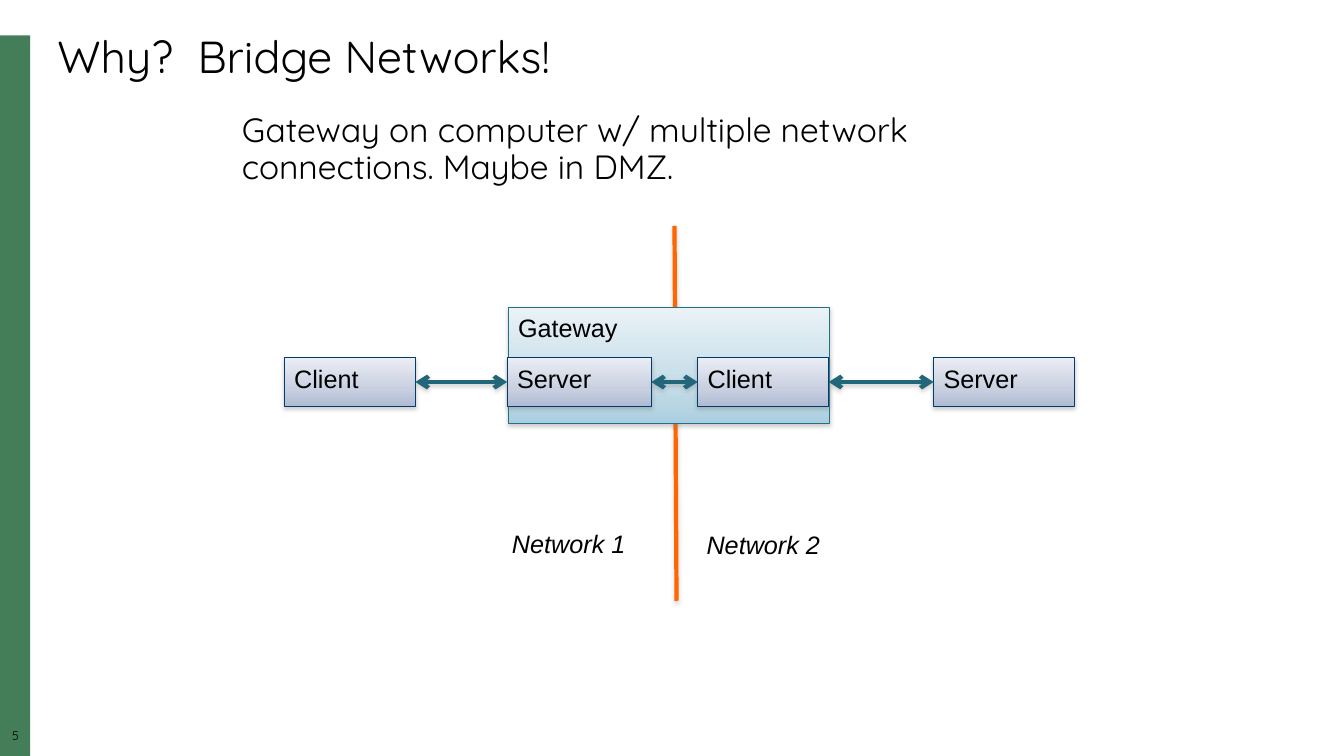
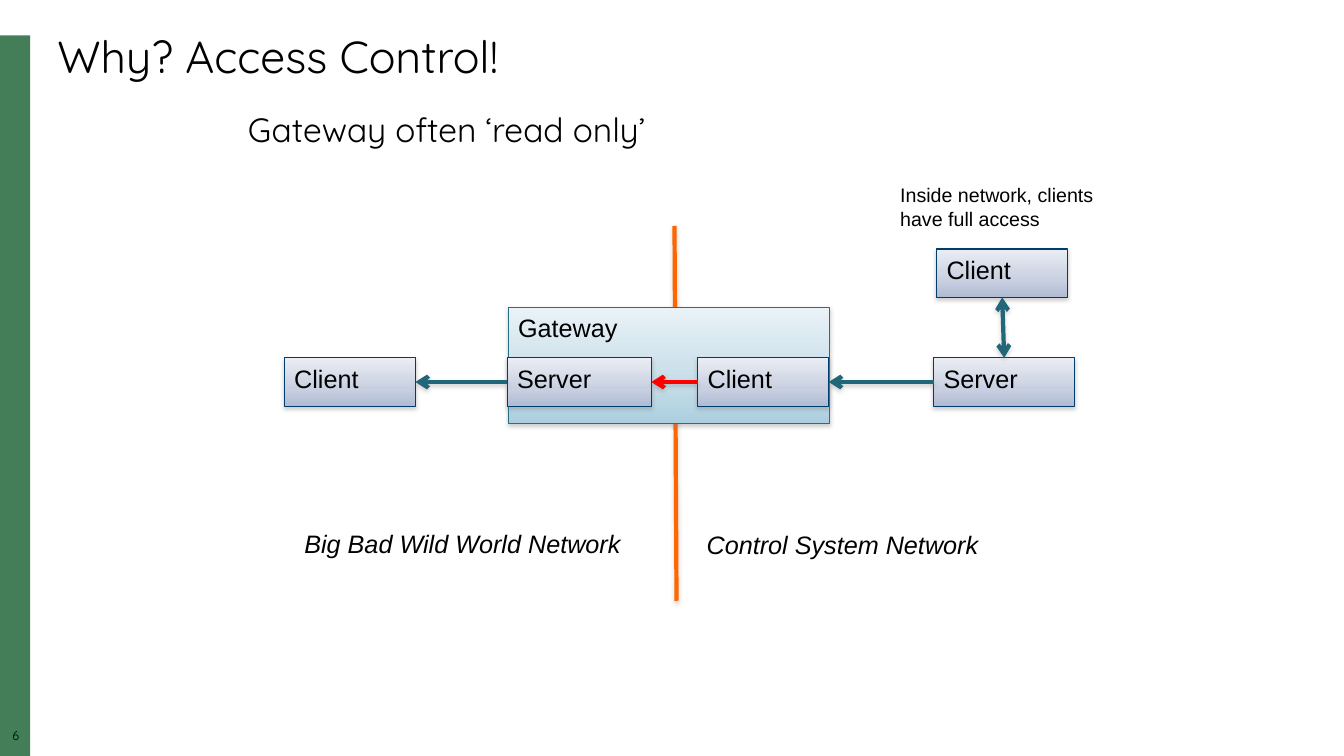
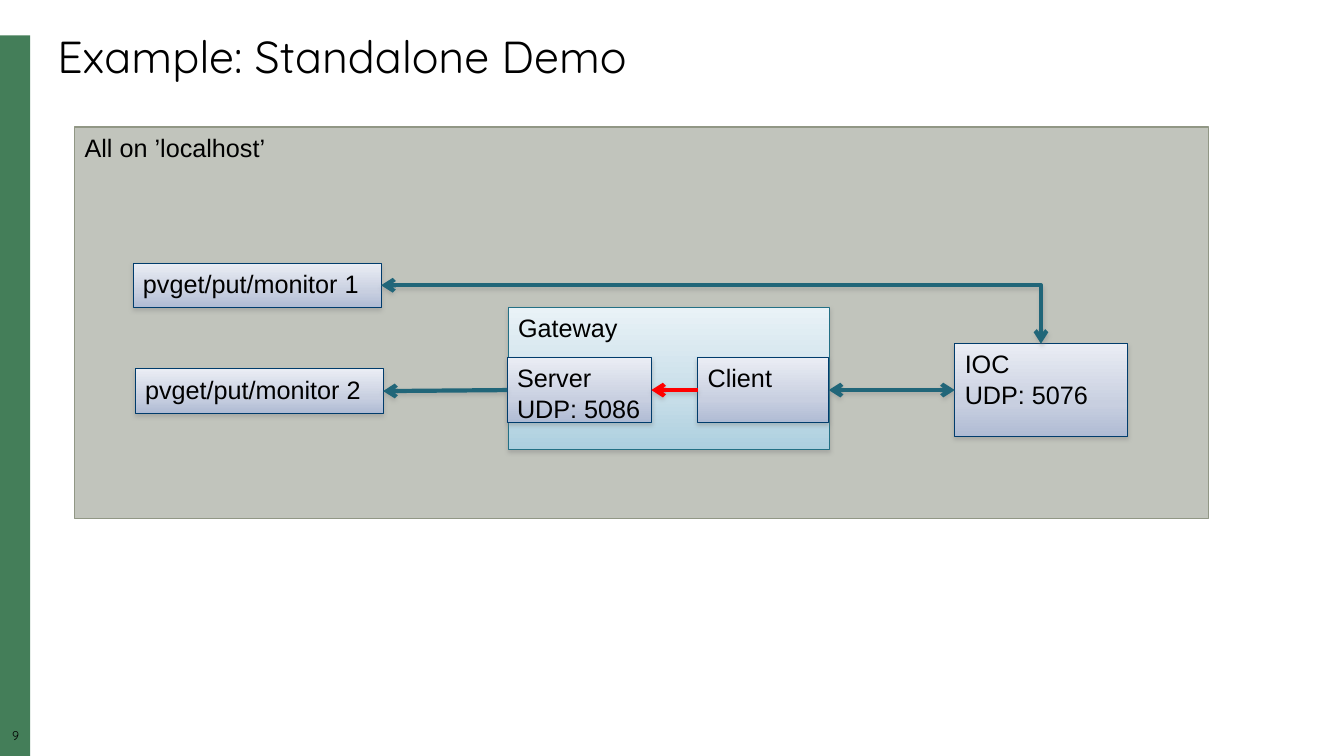
from lxml import etree
from pptx import Presentation
from pptx import util as u
from pptx.dml import color
from pptx.enum import shapes, text
from pptx.oxml import ns

COLORS = {
    "black": "000000",
    "band": "447E59",
    "divider": "FF6600",
    "arrow": "216679",
    "blocked": "FF0000",
    "node_line": "003C6C",
    "gateway_line": "237085",
    "host": "C1C4BC",
    "host_line": "919785",
    "shadow": "808080",
}
NODE_STOPS = [(0, "EAEDF4"), (65, "C8CFE0"), (100, "AFBBD4")]
GATEWAY_STOPS = [(0, "E9F2F7"), (65, "C6DDE8"), (100, "ACCFDF")]
TITLE_FONT = "Quicksand"
LABEL_FONT = "Arial"
TOP, LEFT, BOTTOM, RIGHT = range(4)
ROW_TOP = 3.55


def rgb(name):
    """Return the named colour."""
    return color.RGBColor.from_string(COLORS[name])


def inches(*lengths):
    """Convert numbers to lengths."""
    return [u.Inches(length) for length in lengths]


def add_element(parent, tag, **attributes):
    """Append a drawing element with its attributes."""
    values = {key: str(value) for key, value in attributes.items()}
    return etree.SubElement(parent, ns.qn("a:" + tag), values)


def add_shadow(effects, opacity, distance):
    """Add a soft downward shadow to an effect list."""
    shadow = add_element(effects, "outerShdw", blurRad=u.Pt(3.1), dist=u.Pt(distance),
                         dir=5400000, rotWithShape=0)
    tone = add_element(shadow, "srgbClr", val=COLORS["shadow"])
    add_element(tone, "alpha", val=opacity * 1000)


def fill_gradient(shape, stops):
    """Fill a shape from top to bottom with colour stops."""
    shape.fill.gradient()
    shape.fill.gradient_angle = 270
    stop_list = shape._element.spPr.find(ns.qn("a:gradFill")).find(ns.qn("a:gsLst"))
    del stop_list[:]
    for position, value in stops:
        stop = add_element(stop_list, "gs", pos=position * 1000)
        add_element(stop, "srgbClr", val=value)


def write(shape, content, size=18, font=LABEL_FONT, italic=False, spacing=None,
          align=text.PP_ALIGN.LEFT):
    """Write one paragraph, with line breaks, at the top of a shape."""
    frame = shape.text_frame
    frame.word_wrap = True
    frame.vertical_anchor = text.MSO_ANCHOR.TOP
    paragraph = frame.paragraphs[0]
    paragraph.alignment = align
    paragraph.line_spacing = spacing
    for index, line in enumerate(content.split("\n")):
        if index:
            paragraph.add_line_break()
        run = paragraph.add_run()
        run.text = line
        run.font.size = u.Pt(size)
        run.font.name = font
        run.font.italic = italic
        run.font.color.rgb = rgb("black")
    return shape


def add_text(slide, box, content, **style):
    """Add a text box."""
    return write(slide.shapes.add_textbox(*inches(*box)), content, **style)


def add_box(slide, box, line=None):
    """Add a plain rectangle without shadow."""
    shape = slide.shapes.add_shape(shapes.MSO_SHAPE.RECTANGLE, *inches(*box))
    shape.shadow.inherit = False
    if line:
        shape.line.color.rgb = rgb(line)
        shape.line.width = u.Pt(0.75)
    else:
        shape.line.fill.background()
    return shape


def add_solid(slide, box, fill, line=None):
    """Add a rectangle in one colour."""
    shape = add_box(slide, box, line)
    shape.fill.solid()
    shape.fill.fore_color.rgb = rgb(fill)
    return shape


def add_node(slide, box, content, stops=NODE_STOPS, line="node_line"):
    """Add a labelled gradient rectangle with a shadow."""
    shape = add_box(slide, box, line)
    fill_gradient(shape, stops)
    add_shadow(shape._element.spPr.find(ns.qn("a:effectLst")), 38, 1.6)
    return write(shape, content)


def add_line(slide, ends, tone, head=False, tail=False, kind=shapes.MSO_CONNECTOR.STRAIGHT):
    """Add a thick connector with optional arrowheads."""
    connector = slide.shapes.add_connector(kind, *inches(*ends))
    connector.line.color.rgb = rgb(tone)
    connector.line.width = u.Pt(3)
    outline = connector.line._get_or_add_ln()
    for tag, shown in (("headEnd", head), ("tailEnd", tail)):
        if shown:
            add_element(outline, tag, type="arrow")
    add_shadow(add_element(connector._element.spPr, "effectLst"), 35, 1.8)
    return connector


def join(slide, start, end, sides=(RIGHT, LEFT), tone="arrow", both=True, **style):
    """Join two nodes with an arrow that points at the first, or at both."""
    connector = add_line(slide, (0, 0, 1, 1), tone, head=True, tail=both, **style)
    connector.begin_connect(start, sides[0])
    connector.end_connect(end, sides[1])
    return connector


def add_slide(presentation, title, number):
    """Add a slide with side band, page number and title."""
    slide = presentation.slides.add_slide(presentation.slide_layouts[6])
    add_solid(slide, (0, 0.35, 0.3, 7.15), "band")
    page = add_text(slide, (0, 7.24, 0.31, 0.17), str(number), size=9, font=TITLE_FONT,
                    spacing=0.9, align=text.PP_ALIGN.CENTER)
    frame = page.text_frame
    frame.margin_left = frame.margin_right = frame.margin_top = frame.margin_bottom = 0
    add_text(slide, (0.47, 0.3, 12.5, 0.59), title, size=32, font=TITLE_FONT, spacing=0.9)
    return slide


def add_lead(slide, box, content):
    """Add the statement below the title."""
    add_text(slide, box, content, size=24, font=TITLE_FONT, spacing=0.9)


def add_gateway(slide, height, node_height, server_label="Server"):
    """Add the gateway and return its server and client."""
    add_node(slide, (5.04, 3.05, 3.19, height), "Gateway", GATEWAY_STOPS, "gateway_line")
    client = add_node(slide, (6.92, ROW_TOP, 1.3, node_height), "Client")
    server = add_node(slide, (5.03, ROW_TOP, 1.43, node_height), server_label)
    return server, client


def add_networks(slide, left_label, left_box, right_label, right_width, both, middle_tone):
    """Draw two networks bridged by a gateway and return the far server."""
    add_line(slide, (6.69, 2.24, 6.71, 5.96), "divider")
    inner_server, inner_client = add_gateway(slide, 1.15, 0.48)
    client = add_node(slide, (2.82, ROW_TOP, 1.3, 0.48), "Client")
    server = add_node(slide, (9.26, ROW_TOP, 1.4, 0.48), "Server")
    join(slide, client, inner_server, both=both)
    join(slide, inner_client, server, both=both)
    join(slide, inner_server, inner_client, tone=middle_tone, both=both)
    add_text(slide, left_box, left_label, italic=True)
    add_text(slide, (6.91, 5.2, right_width, 0.4), right_label, italic=True)
    return server


def build_bridge(presentation):
    """Build the slide on bridging networks."""
    slide = add_slide(presentation, "Why?  Bridge Networks!", 5)
    add_lead(slide, (2.3, 1.08, 8.5, 1.7),
             "Gateway on computer w/ multiple network connections. Maybe in DMZ.")
    add_networks(slide, "Network 1", (4.98, 5.19, 1.34, 0.4), "Network 2", 1.34,
                 both=True, middle_tone="arrow")


def build_access(presentation):
    """Build the slide on access control."""
    slide = add_slide(presentation, "Why? Access Control!", 6)
    add_lead(slide, (2.36, 1.08, 5.27, 0.6), "Gateway often ‘read only’")
    server = add_networks(slide, "Big Bad Wild World Network", (2.92, 5.19, 3.4, 0.4),
                          "Control System Network", 2.98, both=False, middle_tone="blocked")
    client = add_node(slide, (9.29, 2.47, 1.3, 0.48), "Client")
    join(slide, server, client, sides=(TOP, BOTTOM))
    add_text(slide, (8.83, 1.77, 2.13, 0.57), "Inside network, clients have full access", size=14)


def build_demo(presentation):
    """Build the slide with the standalone demo."""
    slide = add_slide(presentation, "Example: Standalone Demo", 9)
    write(add_solid(slide, (0.74, 1.26, 11.25, 3.88), "host", "host_line"), "All on ’localhost’")
    server, client = add_gateway(slide, 1.41, 0.64, "Server\nUDP: 5086")
    direct = add_node(slide, (1.32, 2.61, 2.46, 0.44), "pvget/put/monitor 1")
    bridged = add_node(slide, (1.34, 3.66, 2.46, 0.44), "pvget/put/monitor 2")
    controller = add_node(slide, (9.47, 3.41, 1.71, 0.92), "IOC\nUDP: 5076")
    join(slide, bridged, server, both=False)
    join(slide, client, controller)
    join(slide, server, client, tone="blocked", both=False)
    corner = join(slide, direct, controller, sides=(RIGHT, TOP), kind=shapes.MSO_CONNECTOR.ELBOW)
    corner._element.spPr.find(ns.qn("a:prstGeom")).set("prst", "bentConnector2")


def main():
    """Build and save the presentation."""
    presentation = Presentation()
    presentation.slide_width, presentation.slide_height = inches(13.33, 7.5)
    build_bridge(presentation)
    build_access(presentation)
    build_demo(presentation)
    presentation.save("out.pptx")


if __name__ == "__main__":
    main()
